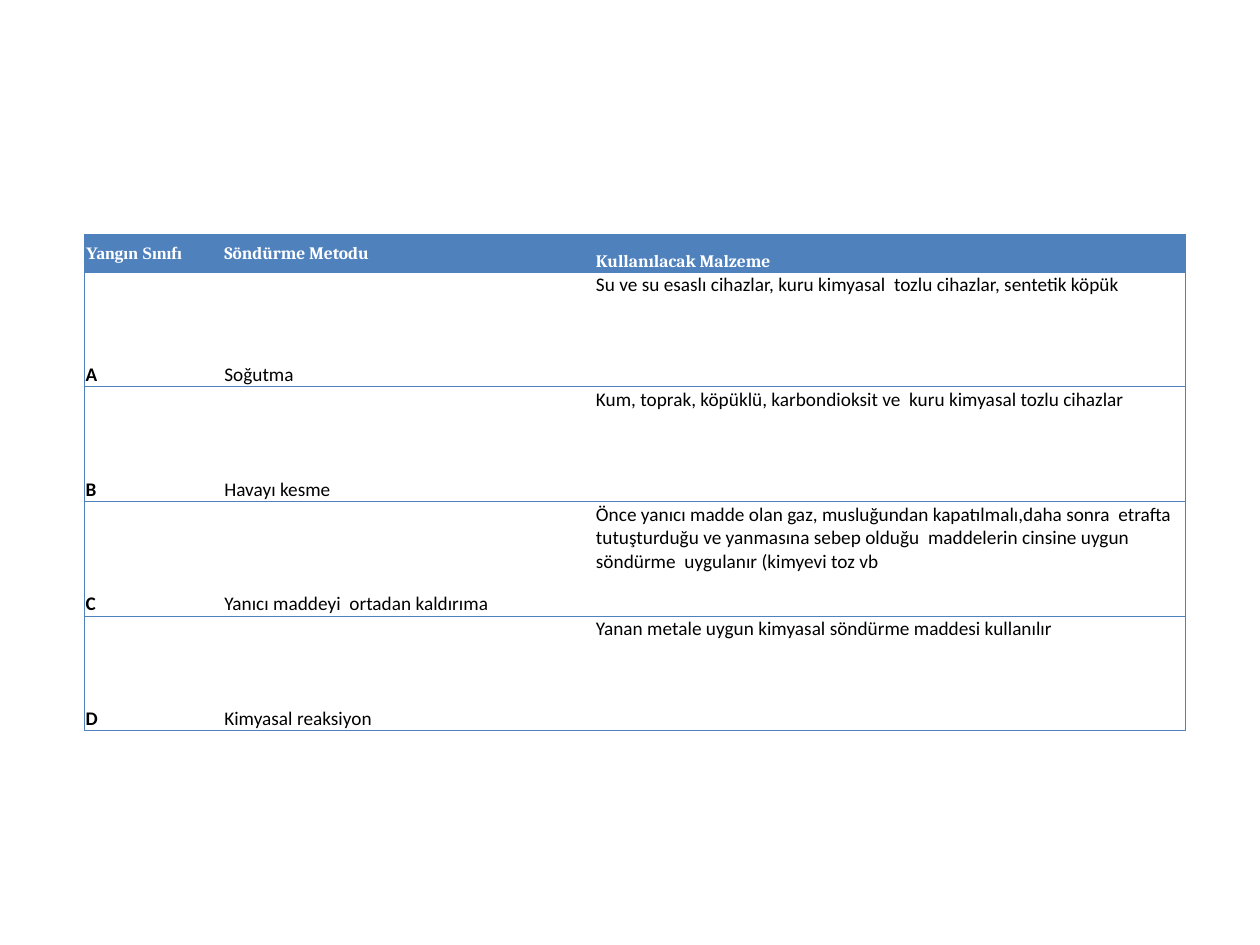
from lxml import etree
from pptx import Presentation
from pptx.dml.color import RGBColor
from pptx.enum.text import MSO_ANCHOR as ANCHOR
from pptx.oxml.ns import qn
from pptx.util import Inches, Pt

BLUE = RGBColor(0x4F, 0x81, 0xBD)
WHITE = RGBColor(0xFF, 0xFF, 0xFF)
BLACK = RGBColor(0x00, 0x00, 0x00)

COL_WIDTHS = (1.1, 2.95, 4.69)
HEADER_HEIGHT = 0.3
HEADERS = ("Yangın Sınıfı", "Söndürme Metodu", "Kullanılacak Malzeme")
HEADER_FONTS = ("Times New Roman", "Cambria", "Cambria")
HEADER_ANCHORS = (ANCHOR.MIDDLE, ANCHOR.MIDDLE, ANCHOR.BOTTOM)
BODY_ANCHORS = (ANCHOR.BOTTOM, ANCHOR.BOTTOM, ANCHOR.TOP)
FIRE_CLASSES = (
    ("A", "Soğutma",
     "Su ve su esaslı cihazlar, kuru kimyasal  tozlu cihazlar, sentetik köpük"),
    ("B", "Havayı kesme",
     "Kum, toprak, köpüklü, karbondioksit ve  kuru kimyasal tozlu cihazlar"),
    ("C", "Yanıcı maddeyi  ortadan kaldırıma",
     "Önce yanıcı madde olan gaz, musluğundan kapatılmalı,daha sonra  etrafta "
     "tutuşturduğu ve yanmasına sebep olduğu  maddelerin cinsine uygun "
     "söndürme  uygulanır (kimyevi toz vb"),
    ("D", "Kimyasal reaksiyon",
     "Yanan metale uygun kimyasal söndürme maddesi kullanılır"),
)


def set_text(cell, text, *, size, font, color, bold=False, anchor=ANCHOR.TOP):
    cell.margin_left = cell.margin_right = cell.margin_top = Inches(0.01)
    cell.margin_bottom = 0
    cell.vertical_anchor = anchor
    r = cell.text_frame.paragraphs[0].add_run()
    r.text = text
    r.font.size = Pt(size)
    r.font.name = font
    r.font.bold = bold
    r.font.color.rgb = color


def set_borders(cell, visible):
    """Draw the sides named in visible (of L, R, T, B) and hide the others."""
    tc_pr = cell._tc.get_or_add_tcPr()
    for i, side in enumerate("LRTB"):
        ln = etree.Element(qn(f"a:ln{side}"), w=str(Pt(0.5)))
        if side in visible:
            fill = etree.SubElement(ln, qn("a:solidFill"))
            etree.SubElement(fill, qn("a:srgbClr"), val=str(BLUE))
        else:
            etree.SubElement(ln, qn("a:noFill"))
        tc_pr.insert(i, ln)


def add_fire_table(slide, left, top, width, height):
    rows = (HEADERS, *FIRE_CLASSES)
    table = slide.shapes.add_table(
        len(rows), len(HEADERS), left, top, width, height).table
    table.first_row = table.horz_banding = False
    for col, col_width in zip(table.columns, COL_WIDTHS):
        col.width = Inches(col_width)
    header_height = Inches(HEADER_HEIGHT)
    for i, row in enumerate(table.rows):
        row.height = (header_height if i == 0
                      else (height - header_height) // len(FIRE_CLASSES))

    for i, texts in enumerate(rows):
        for j, text in enumerate(texts):
            cell = table.cell(i, j)
            if i == 0:
                cell.fill.solid()
                cell.fill.fore_color.rgb = BLUE
                set_text(cell, text, size=10, font=HEADER_FONTS[j], color=WHITE,
                         bold=True, anchor=HEADER_ANCHORS[j])
            else:
                cell.fill.background()
                set_text(cell, text, size=11, font="Calibri", color=BLACK,
                         bold=j == 0, anchor=BODY_ANCHORS[j])
            set_borders(cell, ("LTB", "TB", "RTB")[j])


def main():
    prs = Presentation()
    prs.slide_width, prs.slide_height = Inches(10), Inches(7.5)
    slide = prs.slides.add_slide(prs.slide_layouts[6])
    add_fire_table(slide, Inches(0.67), Inches(1.86), Inches(8.74), Inches(3.94))
    prs.save("out.pptx")


if __name__ == "__main__":
    main()
